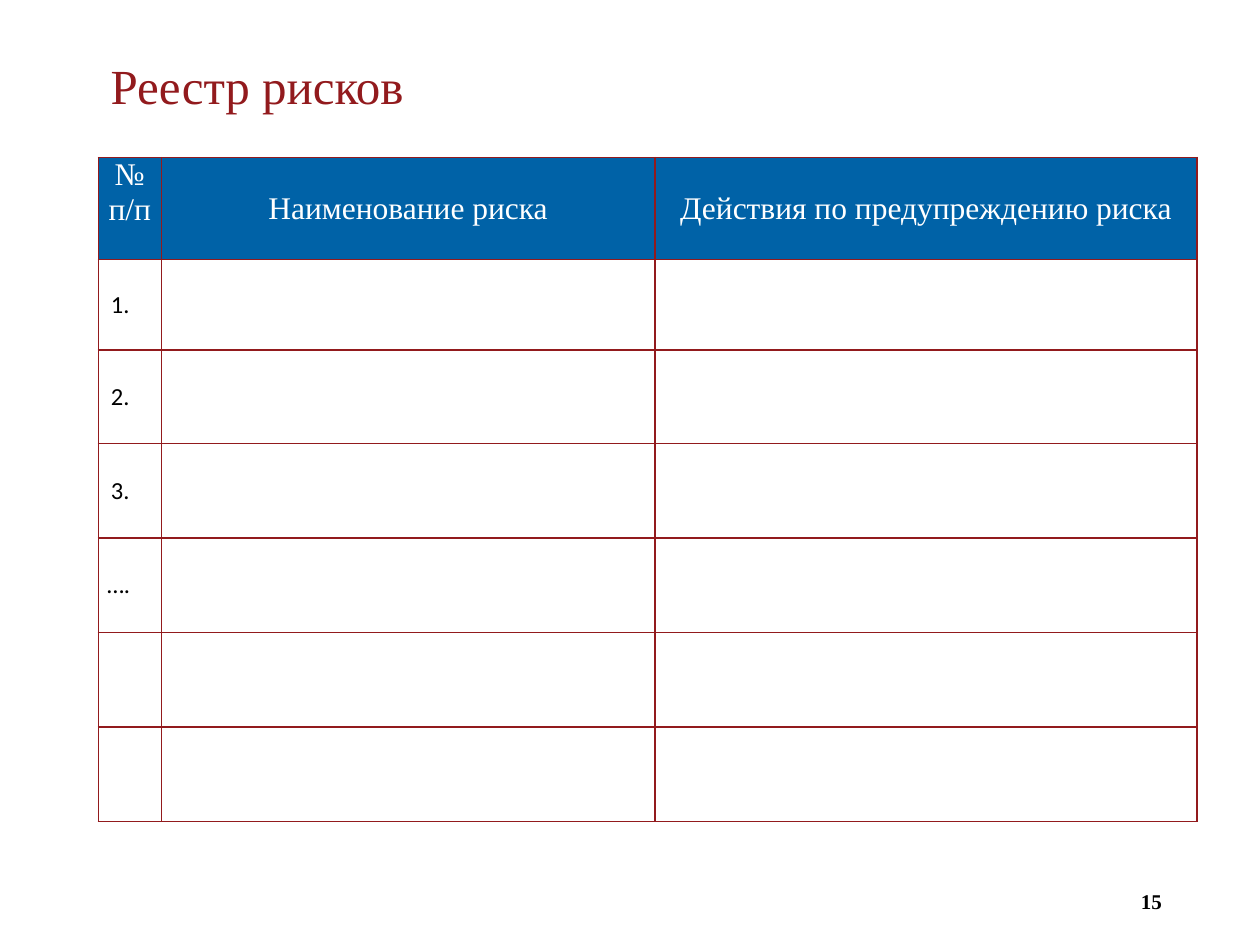
"""Builds the risk register slide: a title, an empty register table and a page number."""
from lxml import etree
from pptx import Presentation
from pptx.dml.color import RGBColor
from pptx.enum.text import MSO_ANCHOR, PP_ALIGN
from pptx.oxml.ns import qn
from pptx.util import Inches, Pt

TITLE = "Реестр рисков"
PAGE_NUMBER = "15"
HEADERS = [["№", "п/п"], ["Наименование риска"], ["Действия по предупреждению риска"]]
ROW_LABELS = ["1.", "2.", "3.", "….", "", ""]
COLUMN_WIDTHS = [0.5, 3.92, 4.3]
ROW_HEIGHTS = [0.81, 0.72, 0.74] + [0.75] * 4
LEFT, TABLE_TOP = 0.78, 1.25

RED = RGBColor(0x92, 0x1A, 0x1D)
BLUE = RGBColor(0x00, 0x62, 0xA7)
WHITE = RGBColor(0xFF, 0xFF, 0xFF)
BLACK = RGBColor(0x00, 0x00, 0x00)
SERIF, SANS = "Times New Roman", "Calibri"


def write(frame, lines, size, font, color, align=PP_ALIGN.LEFT, bold=False):
    for index, line in enumerate(lines):
        paragraph = frame.add_paragraph() if index else frame.paragraphs[0]
        paragraph.alignment = align
        run = paragraph.add_run()
        run.text = line
        run.font.size, run.font.name, run.font.bold = Pt(size), font, bold
        run.font.color.rgb = color


def add_label(slide, box, *style, **options):
    frame = slide.shapes.add_textbox(*map(Inches, box)).text_frame
    frame.word_wrap = True
    frame.vertical_anchor = MSO_ANCHOR.MIDDLE
    write(frame, *style, **options)
    return frame


def style_cell(cell, fill):
    properties = cell._tc.get_or_add_tcPr()
    for side in ("a:lnL", "a:lnR", "a:lnT", "a:lnB"):
        border = etree.SubElement(properties, qn(side), w=str(Pt(1)))
        solid = etree.SubElement(border, qn("a:solidFill"))
        etree.SubElement(solid, qn("a:srgbClr"), val=str(RED))
    cell.fill.solid()
    cell.fill.fore_color.rgb = fill
    cell.vertical_anchor = MSO_ANCHOR.MIDDLE


def tighten(cell):
    cell.margin_left = cell.margin_right = Inches(0.07)
    cell.margin_top = cell.margin_bottom = 0


def add_register(slide):
    table = slide.shapes.add_table(
        len(ROW_HEIGHTS), len(COLUMN_WIDTHS), Inches(LEFT), Inches(TABLE_TOP),
        Inches(sum(COLUMN_WIDTHS)), Inches(sum(ROW_HEIGHTS))).table
    table.horz_banding = False
    for column, width in zip(table.columns, COLUMN_WIDTHS):
        column.width = Inches(width)
    for index, (row, height) in enumerate(zip(table.rows, ROW_HEIGHTS)):
        row.height = Inches(height)
        for cell in row.cells:
            style_cell(cell, WHITE if index else BLUE)
    for column, header in enumerate(HEADERS):
        cell = table.cell(0, column)
        tighten(cell)
        write(cell.text_frame, header, 18, SERIF, WHITE, PP_ALIGN.CENTER)
    table.cell(0, 0).vertical_anchor = MSO_ANCHOR.TOP
    for row, label in enumerate(ROW_LABELS, start=1):
        cell = table.cell(row, 0)
        if label:
            write(cell.text_frame, [label], 14, SANS, BLACK)
        if label == "….":
            tighten(cell)


def main():
    presentation = Presentation()
    presentation.slide_width, presentation.slide_height = Inches(10), Inches(7.5)
    slide = presentation.slides.add_slide(presentation.slide_layouts[6])
    add_label(slide, (7.07, 6.95, 2.25, 0.4), [PAGE_NUMBER], 12, SERIF, BLACK,
              align=PP_ALIGN.RIGHT, bold=True)
    title = add_label(slide, (LEFT, 0.25, 8.39, 0.9), [TITLE], 28, SERIF, RED)
    title.paragraphs[0].line_spacing = 0.9
    add_register(slide)
    presentation.save("out.pptx")


if __name__ == "__main__":
    main()
